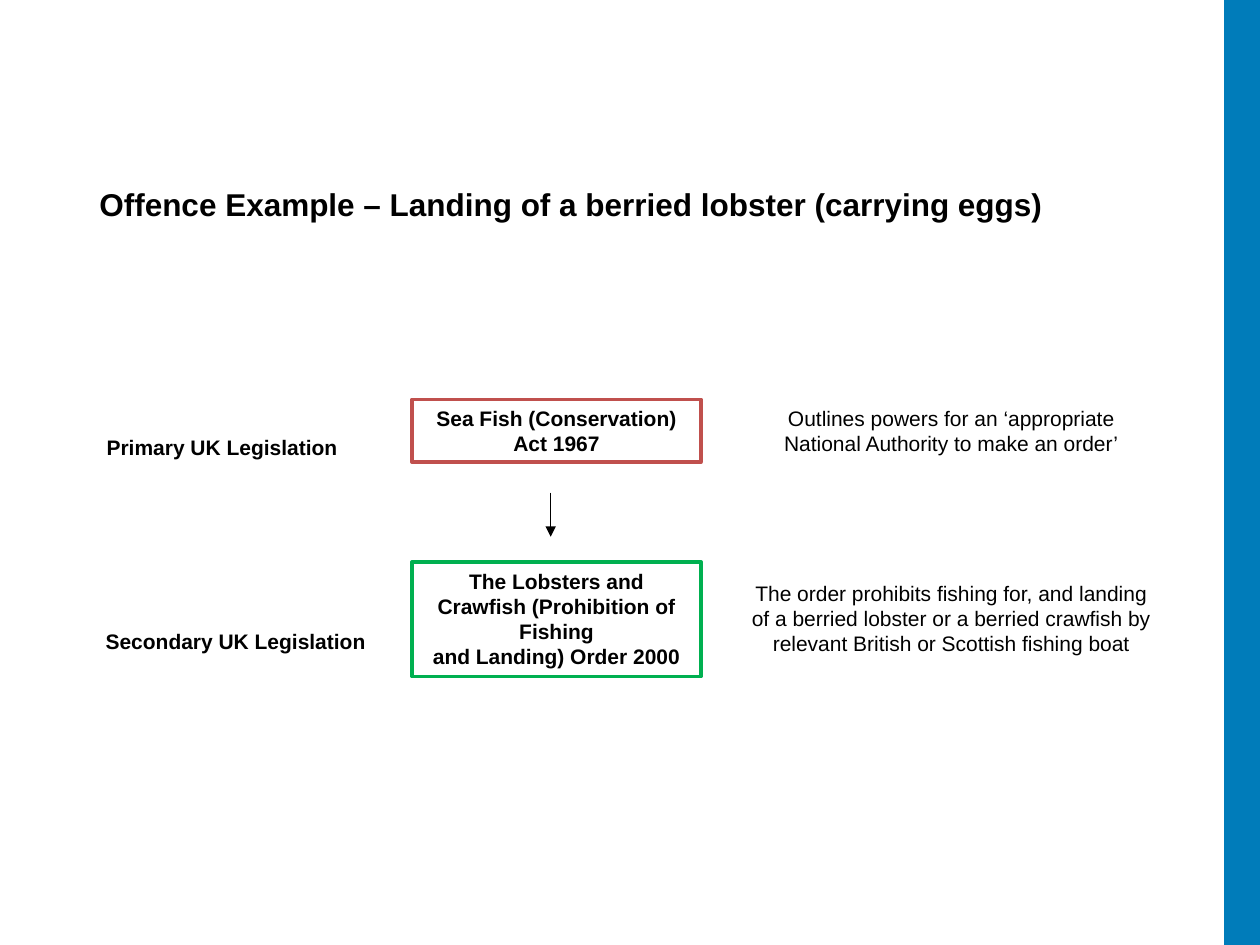
from lxml import etree
from pptx import Presentation
from pptx.dml.color import RGBColor
from pptx.enum.shapes import MSO_CONNECTOR, MSO_SHAPE
from pptx.enum.text import MSO_ANCHOR, MSO_AUTO_SIZE, PP_ALIGN
from pptx.oxml.ns import qn
from pptx.util import Cm, Pt

RECTANGLE = MSO_SHAPE.RECTANGLE
STRAIGHT = MSO_CONNECTOR.STRAIGHT
TOP = MSO_ANCHOR.TOP
GROW = MSO_AUTO_SIZE.SHAPE_TO_FIT_TEXT
LEFT, CENTER = PP_ALIGN.LEFT, PP_ALIGN.CENTER


def color(value):
    return RGBColor.from_string(value)


def write(shape, lines, size, bold, alignment):
    frame = shape.text_frame
    frame.text = "\n".join(lines)
    frame_format = {"word_wrap": True, "auto_size": GROW, "vertical_anchor": TOP}
    for name, value in frame_format.items():
        setattr(frame, name, value)
    font_format = {"name": "Arial", "size": Pt(size), "bold": bold}
    for paragraph in frame.paragraphs:
        paragraph.alignment = alignment
        for name, value in font_format.items():
            setattr(paragraph.font, name, value)
        paragraph.font.color.rgb = color("000000")


presentation = Presentation()
presentation.slide_width = Cm(25.4)
presentation.slide_height = Cm(19.05)
slide = presentation.slides.add_slide(presentation.slide_layouts[5])
shapes = slide.shapes

title = shapes.title
title_position = {"left": 1.75, "top": 3.61, "width": 21.95, "height": 1.02}
for name, value in title_position.items():
    setattr(title, name, Cm(value))
write(title, ["Offence Example – Landing of a berried lobster (carrying eggs)"], 18, True, LEFT)

side_bar = shapes.add_shape(RECTANGLE, Cm(24.71), 0, Cm(0.69), Cm(19.05))
side_bar.shadow.inherit = False
side_bar.fill.solid()
side_bar.fill.fore_color.rgb = color("007CBA")
side_bar.line.color.rgb = color("007CBA")
side_bar.line.width = Pt(2)

labels = [
    ("Primary UK Legislation", 1.9, 8.64),
    ("Secondary UK Legislation", 1.88, 12.55),
]
for text, left, top in labels:
    label = shapes.add_textbox(Cm(left), Cm(top), Cm(6.3), Cm(0.76))
    write(label, [text], 12, True, LEFT)

acts = [
    (["Sea Fish (Conservation) Act 1967"], 8.05, 1.27, "C0504D", 2),
    (["The Lobsters and Crawfish (Prohibition of Fishing", "and Landing) Order 2000"],
     11.33, 2.31, "00B050", 2.25),
]
for lines, top, height, border, width in acts:
    act = shapes.add_shape(RECTANGLE, Cm(8.31), Cm(top), Cm(5.82), Cm(height))
    act.shadow.inherit = False
    act.fill.solid()
    act.fill.fore_color.rgb = color("FFFFFF")
    act.line.color.rgb = color(border)
    act.line.width = Pt(width)
    write(act, lines, 12, True, CENTER)

descriptions = [
    ("Outlines powers for an ‘appropriate National Authority to make an order’", 8.05),
    ("The order prohibits fishing for, and landing of a berried lobster or a berried "
     "crawfish by relevant British or Scottish fishing boat", 11.58),
]
for text, top in descriptions:
    description = shapes.add_textbox(Cm(14.88), Cm(top), Cm(8.6), Cm(1.8))
    write(description, [text], 12, False, CENTER)

arrow = shapes.add_connector(STRAIGHT, Cm(11.1), Cm(9.93), Cm(11.1), Cm(10.82))
arrow.line.color.rgb = color("000000")
arrow.line.width = Pt(0.75)
properties = arrow.element.spPr
etree.SubElement(properties.find(qn("a:ln")), qn("a:tailEnd"), type="triangle")
etree.SubElement(properties, qn("a:effectLst"))

presentation.save("out.pptx")
